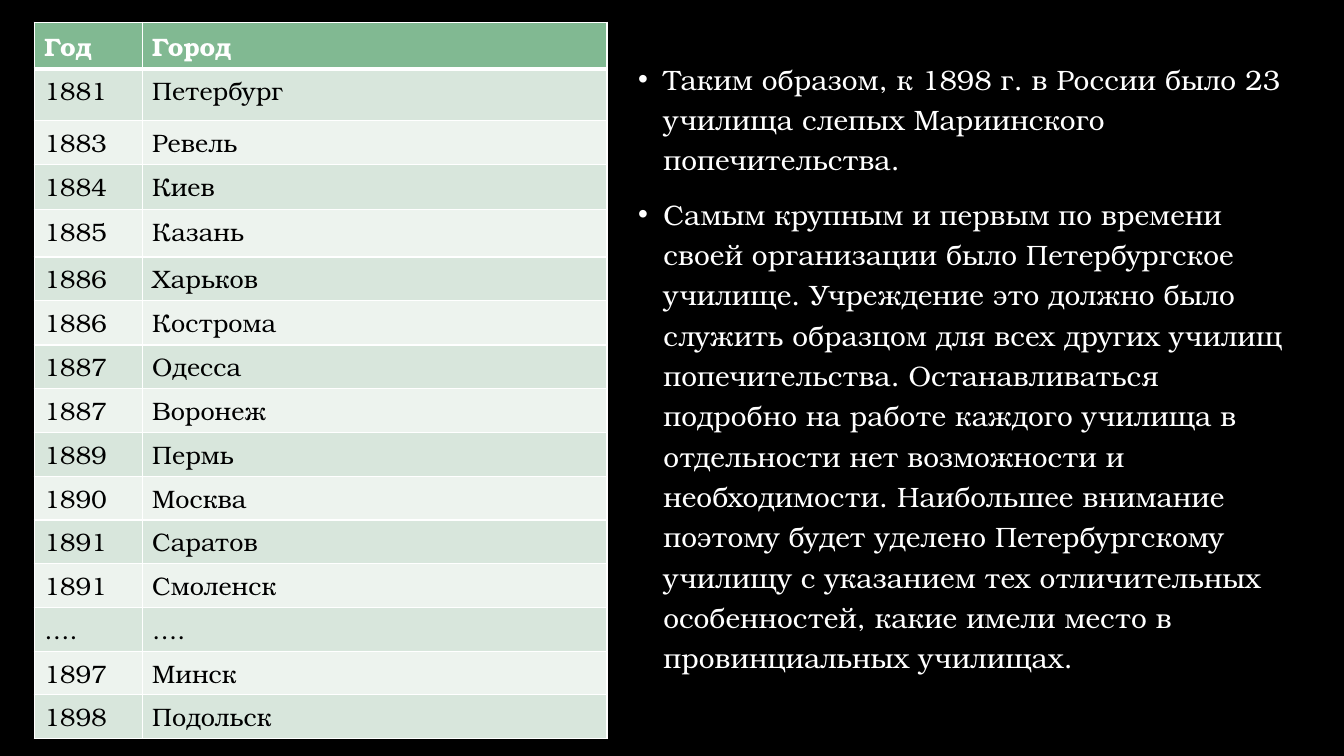
from lxml import etree
from pptx import Presentation
from pptx.dml.color import RGBColor
from pptx.enum.text import MSO_ANCHOR, MSO_AUTO_SIZE, PP_ALIGN
from pptx.oxml.ns import qn
from pptx.util import Inches, Pt

TOP = MSO_ANCHOR.TOP
NO_FIT = MSO_AUTO_SIZE.NONE
LEFT = PP_ALIGN.LEFT
FONT = "TeX Gyre Bonum"
COLORS = {
    "background": "000000",
    "white": "FFFFFF",
    "black": "000000",
    "header": "81B992",
    "odd": "D8E6DC",
    "even": "EDF3EE",
}
SCHOOLS = [
    ("Год", "Город"),
    ("1881", "Петербург"),
    ("1883", "Ревель"),
    ("1884", "Киев"),
    ("1885", "Казань"),
    ("1886", "Харьков"),
    ("1886", "Кострома"),
    ("1887", "Одесса"),
    ("1887", "Воронеж"),
    ("1889", "Пермь"),
    ("1890", "Москва"),
    ("1891", "Саратов"),
    ("1891", "Смоленск"),
    ("….", "…."),
    ("1897", "Минск"),
    ("1898", "Подольск"),
]
ROW_HEIGHT = 0.4
TALL_ROWS = {1: 0.51, 3: 0.45, 4: 0.47, 6: 0.44}
CONCLUSIONS = [
    "Таким образом, к 1898 г. в России было 23 училища слепых Мариинского попечительства.",
    "Самым крупным и первым по времени своей организации было Петербургское училище. "
    "Учреждение это должно было служить образцом для всех других училищ попечительства. "
    "Останавливаться подробно на работе каждого училища в отдельности нет возможности и "
    "необходимости. Наибольшее внимание поэтому будет уделено Петербургскому училищу "
    "с указанием тех отличительных особенностей, какие имели место в провинциальных училищах.",
]


def style_runs(para, size, color, bold=False):
    for span in para.runs:
        span.font.name = FONT
        span.font.size = Pt(size)
        span.font.bold = bold
        span.font.color.rgb = RGBColor.from_string(COLORS[color])


def add_border(cell, side, width):
    properties = cell._tc.get_or_add_tcPr()
    line = etree.Element(qn(f"a:{side}"), w=str(Pt(width)))
    fill = etree.SubElement(line, qn("a:solidFill"))
    etree.SubElement(fill, qn("a:srgbClr"), val=COLORS["white"])
    properties.insert(len(properties) - 1, line)


deck = Presentation()
deck.slide_width = Inches(13.33)
deck.slide_height = Inches(7.5)
page = deck.slides.add_slide(deck.slide_layouts[1])
page.background.fill.solid()
page.background.fill.fore_color.rgb = RGBColor.from_string(COLORS["background"])
title = page.shapes.title
title._element.getparent().remove(title._element)

table = page.shapes.add_table(
    len(SCHOOLS), 2, Inches(0.34), Inches(0.22), Inches(5.68), Inches(6.7)
).table
table.columns[0].width = Inches(1.07)
table.columns[1].width = Inches(4.61)

for row_index, school in enumerate(SCHOOLS):
    is_header = row_index == 0
    band = "header" if is_header else "odd" if row_index % 2 else "even"
    table.rows[row_index].height = Inches(TALL_ROWS.get(row_index, ROW_HEIGHT))
    for column_index, text in enumerate(school):
        cell = table.cell(row_index, column_index)
        cell.text_frame.text = text
        style_runs(cell.text_frame.paragraphs[0], 18, "white" if is_header else "black", is_header)
        cell.fill.solid()
        cell.fill.fore_color.rgb = RGBColor.from_string(COLORS[band])
        for side in ("lnL", "lnR"):
            add_border(cell, side, 1)
        add_border(cell, "lnT", 3 if row_index == 1 else 1)
        add_border(cell, "lnB", 3 if is_header else 1)

body = page.placeholders[1]
body.left, body.top = Inches(6.23), Inches(0.5)
body.width, body.height = Inches(6.78), Inches(6.64)
frame = body.text_frame
frame.text = "\n".join(CONCLUSIONS)
frame.word_wrap = True
frame.auto_size = NO_FIT
frame.vertical_anchor = TOP
for para in frame.paragraphs:
    para.alignment = LEFT
    para.line_spacing = 1.2
    para.space_before = Pt(10)
    style_runs(para, 20, "white")
    properties = para._p.get_or_add_pPr()
    properties.set("marL", str(Inches(0.25)))
    properties.set("indent", str(Inches(-0.25)))
    etree.SubElement(properties, qn("a:buFont"), typeface="Arial")
    etree.SubElement(properties, qn("a:buChar"), char="•")

deck.save("out.pptx")
